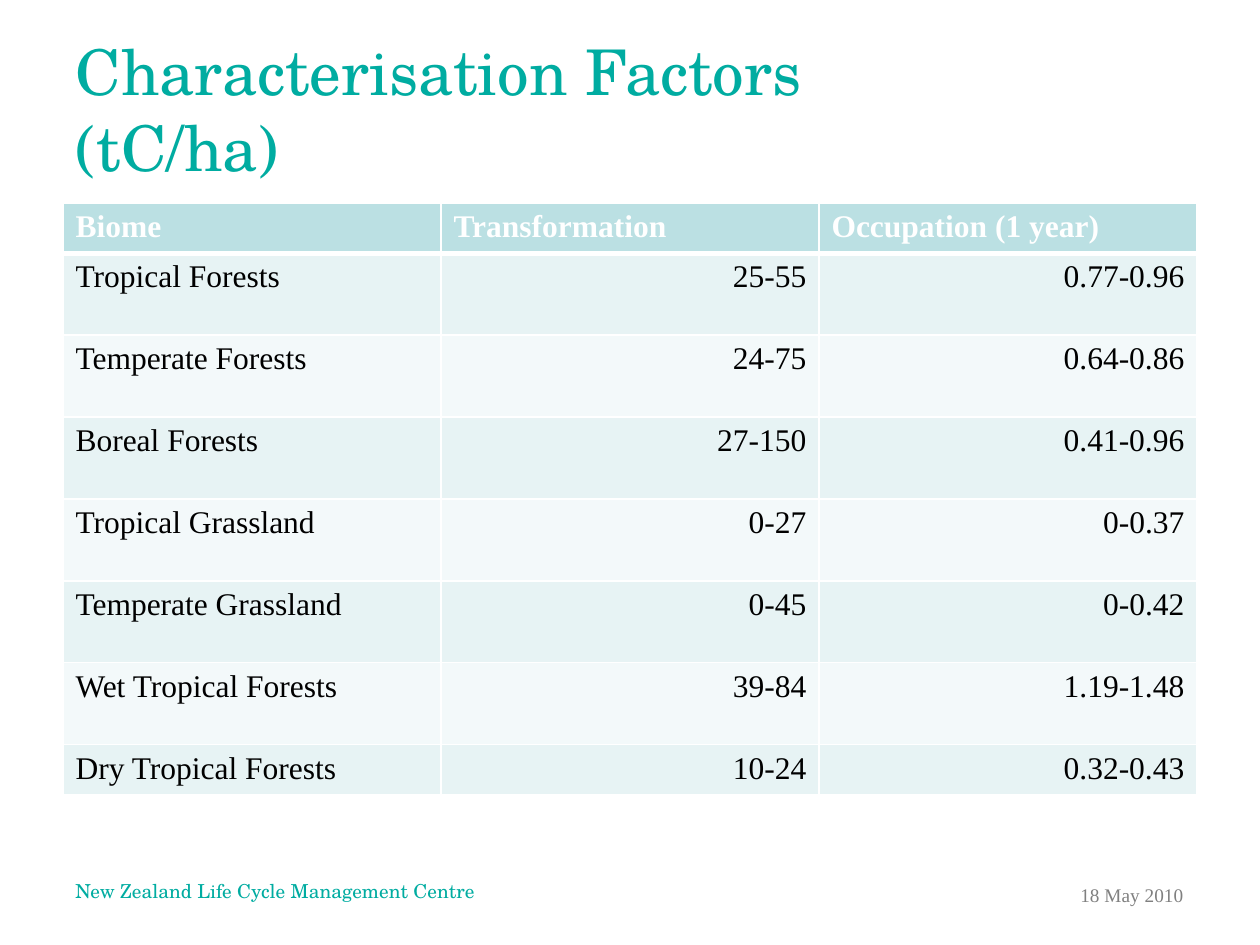
from lxml import etree
from pptx import Presentation
from pptx.dml.color import RGBColor
from pptx.enum.text import MSO_ANCHOR, PP_ALIGN
from pptx.oxml.ns import qn
from pptx.util import Inches, Pt

LEFT, RIGHT = PP_ALIGN.LEFT, PP_ALIGN.RIGHT
MIDDLE = MSO_ANCHOR.MIDDLE
SERIF, SCHOOL = "Times New Roman", "TeX Gyre Schola"
TEAL, GREY, WHITE, BLACK = "00ACA1", "808080", "FFFFFF", "000000"
HEADER_FILL, BAND_FILLS = "BBE0E3", ("F3F9FA", "E7F3F4")

ROWS = [
    ("Biome", "Transformation", "Occupation (1 year)"),
    ("Tropical Forests", "25-55", "0.77-0.96"),
    ("Temperate Forests", "24-75", "0.64-0.86"),
    ("Boreal Forests", "27-150", "0.41-0.96"),
    ("Tropical Grassland", "0-27", "0-0.37"),
    ("Temperate Grassland", "0-45", "0-0.42"),
    ("Wet Tropical Forests", "39-84", "1.19-1.48"),
    ("Dry Tropical Forests", "10-24", "0.32-0.43"),
]


def format_text(frame, size, font_name, color, align=LEFT, bold=False):
    for paragraph in frame.paragraphs:
        paragraph.alignment = align
        paragraph.font.size = Pt(size)
        paragraph.font.name = font_name
        paragraph.font.bold = bold
        paragraph.font.color.rgb = RGBColor.from_string(color)


def set_borders(cell, color, widths):
    """Draw the left, right, top and bottom borders, with widths in points."""
    properties = cell._tc.get_or_add_tcPr()
    for position, (side, width) in enumerate(zip("LRTB", widths)):
        line = etree.Element(qn(f"a:ln{side}"), w=str(Pt(width)))
        fill = etree.SubElement(line, qn("a:solidFill"))
        etree.SubElement(fill, qn("a:srgbClr"), val=color)
        properties.insert(position, line)


prs = Presentation()
prs.slide_width, prs.slide_height = Inches(10), Inches(7.5)
slide = prs.slides.add_slide(prs.slide_layouts[5])

title = slide.shapes.title
title.left, title.top = Inches(0.5), Inches(0.3)
title.width, title.height = Inches(9), Inches(1.12)
title.text_frame.text = "Characterisation Factors \v(tC/ha)"
title.text_frame.vertical_anchor = MIDDLE
format_text(title.text_frame, 36, SCHOOL, TEAL)

table = slide.shapes.add_table(
    len(ROWS), 3, Inches(0.5), Inches(1.61), Inches(9), Inches(4.72)
).table
for r, values in enumerate(ROWS):
    is_header = r == 0
    is_edge = r in (0, len(ROWS) - 1)
    table.rows[r].height = Inches(0.4 if is_edge else 0.65)
    for c, value in enumerate(values):
        cell = table.cell(r, c)
        cell.text = value
        cell.fill.solid()
        cell.fill.fore_color.rgb = RGBColor.from_string(
            HEADER_FILL if is_header else BAND_FILLS[r % 2])
        set_borders(cell, WHITE, (1, 1, 3 if r == 1 else 1, 3 if is_header else 1))
        format_text(cell.text_frame, 18, SERIF, WHITE if is_header else BLACK,
                    LEFT if is_header or c == 0 else RIGHT, is_header)

FOOTERS = [
    ("18 May 2010", 7.4, 6.96, 2.09, 0.27, SERIF, GREY, RIGHT),
    ("New Zealand Life Cycle Management Centre", 0.5, 6.93, 6.07, 0.21,
     SCHOOL, TEAL, LEFT),
]
for text, left, top, width, height, font_name, color, align in FOOTERS:
    footer = slide.shapes.add_textbox(
        Inches(left), Inches(top), Inches(width), Inches(height)).text_frame
    footer.word_wrap = True
    footer.text = text
    format_text(footer, 11, font_name, color, align)

prs.save("out.pptx")
